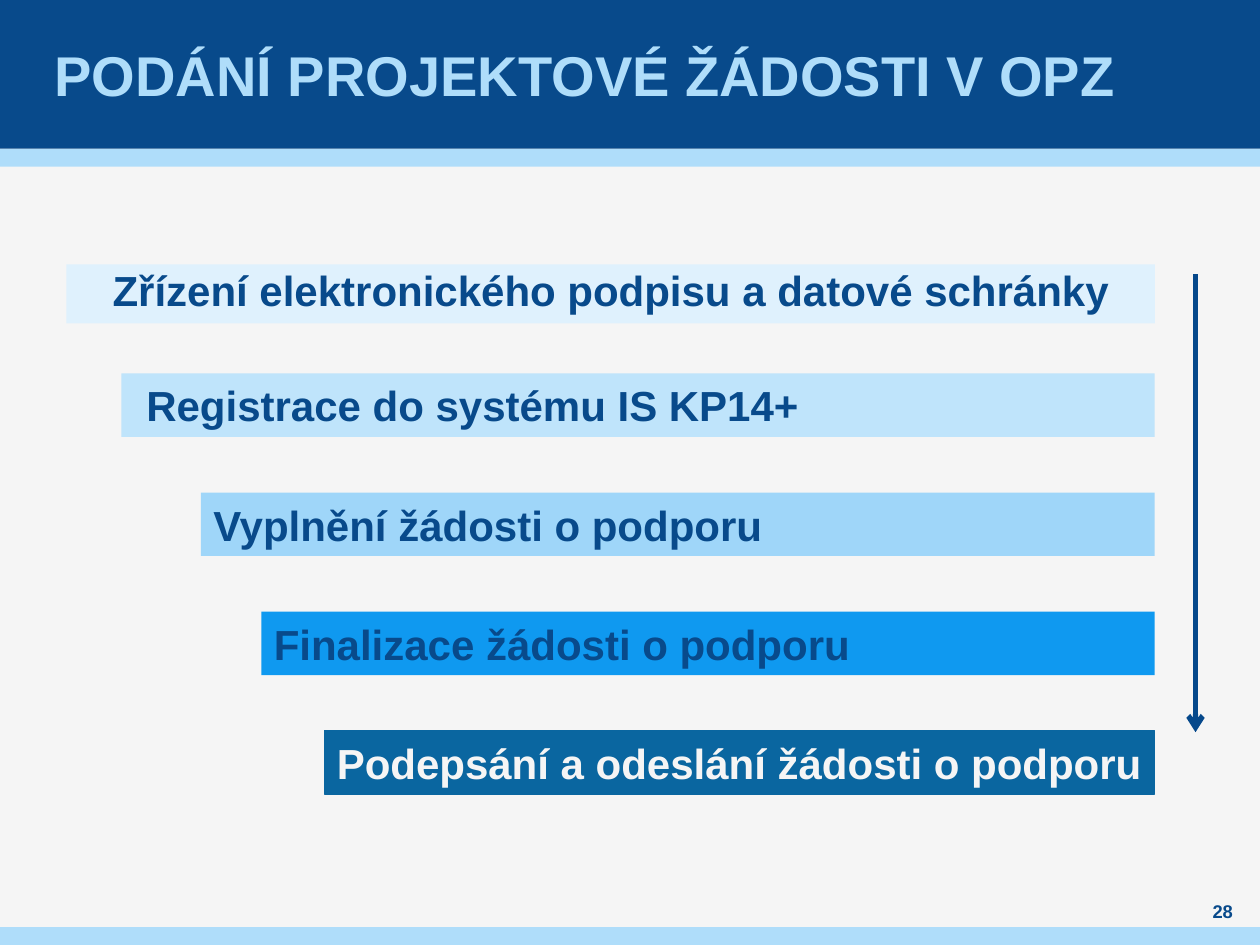
from lxml.etree import SubElement
from pptx import Presentation
from pptx.dml.color import RGBColor
from pptx.enum.shapes import MSO_CONNECTOR, MSO_SHAPE
from pptx.enum.text import MSO_ANCHOR, MSO_AUTO_SIZE, PP_ALIGN
from pptx.oxml.ns import qn
from pptx.util import Cm, Pt

COLOURS = {
    "background": "F5F5F5",
    "navy": "084A8B",
    "arrow": "05488B",
    "sky": "AFDDFA",
    "step 1": "DFF1FD",
    "step 2": "BFE4FB",
    "step 3": "9FD6F9",
    "step 4": "0F99F0",
    "step 5": "0A66A0",
}
SLIDE_WIDTH, SLIDE_HEIGHT = 25.4, 19.05
BAND_HEIGHT = 0.36
STEPS = [
    ("Registrace do systému IS KP14+", 1.11, 0.5, "navy"),
    ("Vyplnění žádosti o podporu", 2.71, 0.25, "navy"),
    ("Finalizace žádosti o podporu", 3.93, 0.25, "navy"),
    ("Podepsání a odeslání žádosti o podporu", 5.2, 0.25, "background"),
]


def rgb(name):
    """Return the named colour."""
    return RGBColor.from_string(COLOURS[name])


def fill_solid(item, colour):
    """Give a shape or background a plain fill."""
    item.fill.solid()
    item.fill.fore_color.rgb = rgb(colour)


def place(shape, left, top, width, height):
    """Move and size a shape, in centimetres."""
    shape.left, shape.top = Cm(left), Cm(top)
    shape.width, shape.height = Cm(width), Cm(height)


def write_text(shape, text, size=24, colour="navy", align=PP_ALIGN.LEFT,
               anchor=MSO_ANCHOR.MIDDLE, margins=(0, 0, 0, 0)):
    """Write one bold paragraph and return it."""
    frame = shape.text_frame
    frame.word_wrap = True
    frame.auto_size = MSO_AUTO_SIZE.NONE
    frame.vertical_anchor = anchor
    (frame.margin_left, frame.margin_top,
     frame.margin_right, frame.margin_bottom) = map(Cm, margins)
    paragraph = frame.paragraphs[0]
    paragraph.alignment = align
    run = paragraph.add_run()
    run.text = text
    run.font.name, run.font.size, run.font.bold = "Arial", Pt(size), True
    run.font.color.rgb = rgb(colour)
    return paragraph


def add_bar(slide, left, top, width, height, colour):
    """Add a plain rectangle without outline."""
    bar = slide.shapes.add_shape(
        MSO_SHAPE.RECTANGLE, Cm(left), Cm(top), Cm(width), Cm(height))
    bar.shadow.inherit = False
    fill_solid(bar, colour)
    bar.line.fill.background()
    return bar


def add_header(slide, left, top, width, height):
    """Build the title banner with its light band below."""
    add_bar(slide, left, top + height, width, BAND_HEIGHT, "sky")
    banner = add_bar(slide, left, top, width, height, "navy")
    title = slide.shapes.title
    banner._element.addnext(title._element)
    place(title, left + 1, top, width - 2, height)
    write_text(title, "PODÁNÍ PROJEKTOVÉ ŽÁDOSTI V OPZ", size=32,
               colour="sky", margins=(0.1, 0, 0.1, 0))


def add_steps(slide, left, top, width, height):
    """Build the staircase of steps, all ending at the right edge."""
    body = slide.placeholders[1]
    place(body, left, top, width, 1.19)
    fill_solid(body, "step 1")
    paragraph = write_text(
        body, "Zřízení elektronického podpisu a datové schránky",
        anchor=MSO_ANCHOR.TOP, margins=(0.93, 0, 0, 0))
    paragraph.line_spacing = Pt(28.8)
    paragraph.space_before = paragraph.space_after = Pt(6)
    properties = paragraph._p.get_or_add_pPr()
    properties.set("marL", "0")
    properties.set("indent", "0")
    SubElement(properties, qn("a:buNone"))

    bar_height, pitch = 1.28, 2.4
    first_top = top + height - bar_height - pitch * (len(STEPS) - 1)
    for index, (text, offset, margin, colour) in enumerate(STEPS):
        bar = add_bar(slide, left + offset, first_top + index * pitch,
                      width - offset, bar_height, f"step {index + 2}")
        write_text(bar, text, colour=colour, anchor=MSO_ANCHOR.TOP,
                   margins=(margin, 0.13, 0, 0.13))
    bar.line.color.rgb = rgb("step 5")
    bar.line.width = Pt(0.75)


def add_arrow(slide, left, top, height):
    """Draw the arrow that points down along the steps."""
    arrow = slide.shapes.add_connector(
        MSO_CONNECTOR.STRAIGHT, Cm(left), Cm(top), Cm(left), Cm(top + height))
    arrow.line.color.rgb = rgb("arrow")
    arrow.line.width = Pt(3)
    SubElement(arrow.line._get_or_add_ln(), qn("a:tailEnd"), type="arrow")
    SubElement(arrow._element.spPr, qn("a:effectLst"))


def add_footer(slide, left, top, width, height):
    """Build the bottom band and the page number above it."""
    add_bar(slide, left, top, width, height, "sky")
    number = slide.shapes.add_textbox(
        Cm(left + width - 1.4), Cm(top - 0.58), Cm(1.3), Cm(0.5))
    write_text(number, "28", size=10.5, align=PP_ALIGN.CENTER)


def main():
    """Build and save the slide."""
    presentation = Presentation()
    presentation.slide_width = Cm(SLIDE_WIDTH)
    presentation.slide_height = Cm(SLIDE_HEIGHT)
    slide = presentation.slides.add_slide(presentation.slide_layouts[1])
    fill_solid(slide.background, "background")
    add_header(slide, 0, 0, SLIDE_WIDTH, 3)
    add_steps(slide, 1.34, 5.33, 21.94, 10.68)
    add_arrow(slide, 24.1, 5.53, 9.23)
    add_footer(slide, 0, SLIDE_HEIGHT - BAND_HEIGHT, SLIDE_WIDTH, BAND_HEIGHT)
    presentation.save("out.pptx")


if __name__ == "__main__":
    main()
